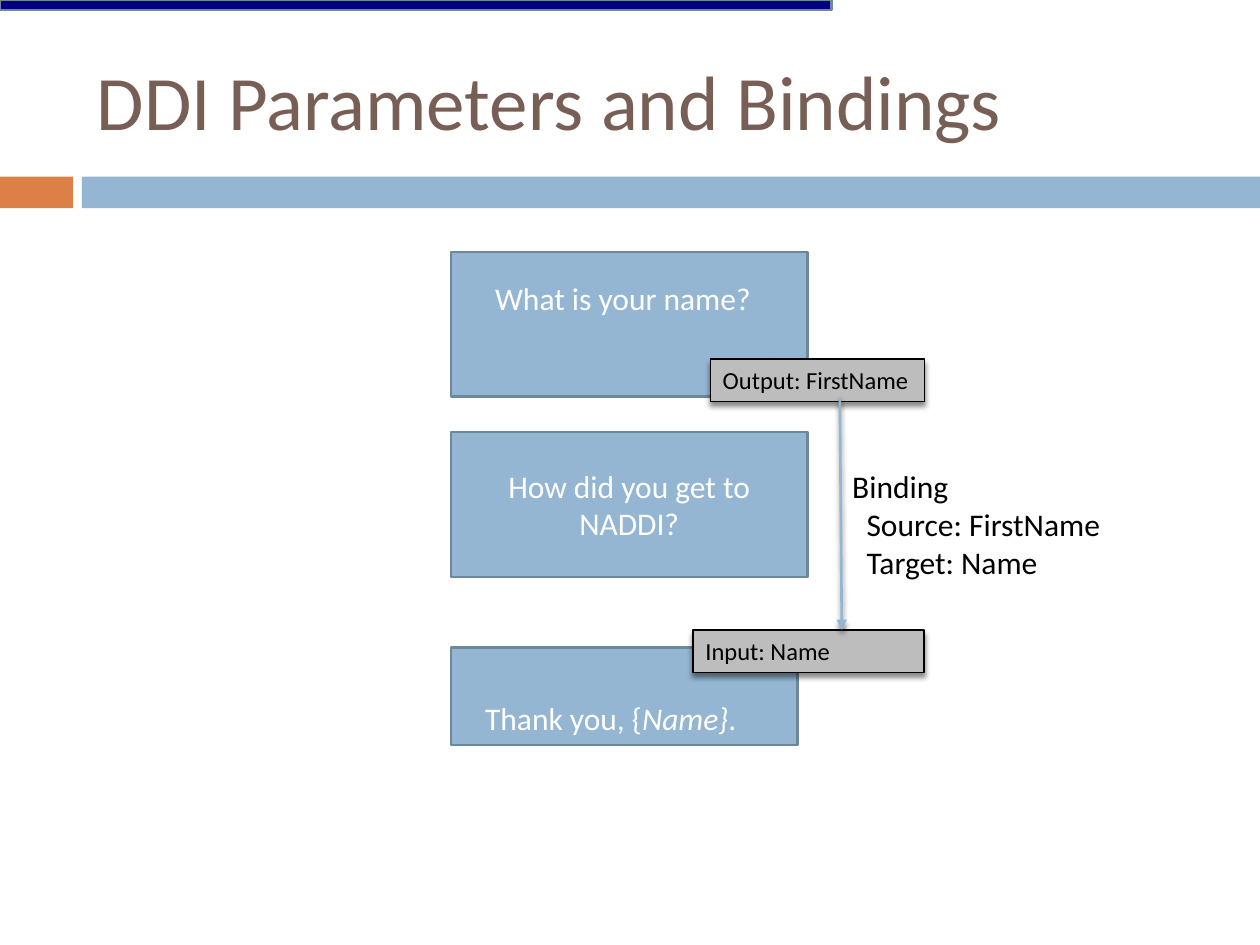
import pptx
import pptx.dml.color
import pptx.enum.dml
import pptx.enum.shapes
import pptx.enum.text
import pptx.oxml
import pptx.oxml.ns
import pptx.util
from dataclasses import dataclass
from lxml import etree

Cm = pptx.util.Cm
Pt = pptx.util.Pt
ANCHOR = pptx.enum.text.MSO_ANCHOR
ALIGN = pptx.enum.text.PP_ALIGN


@dataclass(frozen=True)
class Theme:
    font: str = "Calibri"
    title_size: float = 44
    body_size: float = 18
    tag_size: float = 14
    title: str = "775F55"
    blue: str = "94B6D2"
    outline: str = "6D879B"
    orange: str = "DD8047"
    navy: str = "00007F"
    grey: str = "BDBDBD"
    black: str = "000000"
    white: str = "FFFFFF"
    outline_width: float = 1.5
    tag_line_width: float = 0.79


THEME = Theme()


def rgb(value):
    return pptx.dml.color.RGBColor.from_string(value)


def add_soft_shadow(element):
    """Drop a small dark shadow straight below a shape or connector."""
    properties = element.spPr
    for old in properties.findall(pptx.oxml.ns.qn("a:effectLst")):
        properties.remove(old)
    properties.append(pptx.oxml.parse_xml(
        f'<a:effectLst {pptx.oxml.ns.nsdecls("a")}>'
        f'<a:outerShdw blurRad="{Pt(3)}" dist="{Pt(2.4)}" dir="5400000" rotWithShape="0">'
        f'<a:srgbClr val="{THEME.black}"><a:alpha val="45000"/></a:srgbClr>'
        '</a:outerShdw></a:effectLst>'))


def add_box(slide, left, top, width, height, fill, line=None, line_width=THEME.outline_width):
    box = slide.shapes.add_shape(pptx.enum.shapes.MSO_SHAPE.RECTANGLE,
                                 Cm(left), Cm(top), Cm(width), Cm(height))
    box.shadow.inherit = False
    box.fill.solid()
    box.fill.fore_color.rgb = rgb(fill)
    if line:
        box.line.color.rgb = rgb(line)
        box.line.width = Pt(line_width)
    else:
        box.line.fill.background()
    return box


def write(shape, lines, size, color, anchor=ANCHOR.TOP, align=ALIGN.LEFT):
    """Fill a shape with paragraphs that share one font."""
    frame = shape.text_frame
    frame.word_wrap = True
    frame.vertical_anchor = anchor
    frame.text = "\n".join(lines)
    for paragraph in frame.paragraphs:
        paragraph.alignment = align
        paragraph.font.name = THEME.font
        paragraph.font.size = Pt(size)
        paragraph.font.color.rgb = rgb(color)
    return frame


def add_label(slide, left, top, width, height, lines, size, color, anchor=ANCHOR.TOP):
    label = slide.shapes.add_textbox(Cm(left), Cm(top), Cm(width), Cm(height))
    return write(label, lines, size, color, anchor)


def add_card(slide, top, width=7.19, height=2.92):
    return add_box(slide, 9.09, top, width, height, THEME.blue, THEME.outline)


def add_tag(slide, left, top, width, text):
    tag = add_box(slide, left, top, width, 0.86, THEME.grey, THEME.black, THEME.tag_line_width)
    add_soft_shadow(tag._element)
    write(tag, [text], THEME.tag_size, THEME.black)


def add_arrow(slide, start, end):
    arrow = slide.shapes.add_connector(pptx.enum.shapes.MSO_CONNECTOR.STRAIGHT,
                                       *map(Cm, start), *map(Cm, end))
    arrow.line.color.rgb = rgb(THEME.blue)
    arrow.line.width = Pt(THEME.outline_width)
    etree.SubElement(arrow.line._get_or_add_ln(), pptx.oxml.ns.qn("a:tailEnd"), type="triangle")
    add_soft_shadow(arrow._element)


def main():
    deck = pptx.Presentation()
    deck.slide_width, deck.slide_height = Cm(25.4), Cm(19.05)
    slide = deck.slides.add_slide(deck.slide_layouts[6])

    # Header: title, two-colour band and top strip
    add_box(slide, 0, 3.56, 1.47, 0.64, THEME.orange)
    add_box(slide, 1.65, 3.56, 23.75, 0.64, THEME.blue)
    add_label(slide, 1.7, 0.64, 22.66, 2.74, ["DDI Parameters and Bindings"],
              THEME.title_size, THEME.title, ANCHOR.MIDDLE)
    add_box(slide, 0, 0, 16.76, 0.2, THEME.navy, THEME.outline)

    # Questions
    add_card(slide, 5.08)
    add_label(slide, 9.73, 5.5, 6.55, 1.02, ["What is your name?"],
              THEME.body_size, THEME.white)
    travel_question = add_card(slide, 8.71)
    write(travel_question, ["How did you get to NADDI?"], THEME.body_size, THEME.white,
          ANCHOR.MIDDLE, ALIGN.CENTER)

    # Closing statement with the inserted parameter in italics
    add_card(slide, 13.06, 6.99, 1.96)
    thanks = add_label(slide, 9.53, 13.18, 6.55, 1.8, ["Thank you, {"],
                       THEME.body_size, THEME.white, ANCHOR.BOTTOM).paragraphs[0]
    parameter = thanks.add_run()
    parameter.text = "Name}"
    parameter.font.italic = True
    thanks.add_run().text = "."

    # Parameters and the binding between them
    add_tag(slide, 14.32, 7.24, 4.32, "Output: FirstName")
    add_tag(slide, 13.97, 12.7, 4.66, "Input: Name")
    add_arrow(slide, (16.93, 8), (16.97, 12.7))
    binding = add_label(slide, 16.93, 9.3, 7.32, 2.57,
                        ["Binding", "Source: FirstName", "Target: Name"],
                        THEME.body_size, THEME.black)
    for detail in binding.paragraphs[1:]:
        detail._p.get_or_add_pPr().set("marL", str(Cm(0.29)))

    deck.save("out.pptx")


if __name__ == "__main__":
    main()
